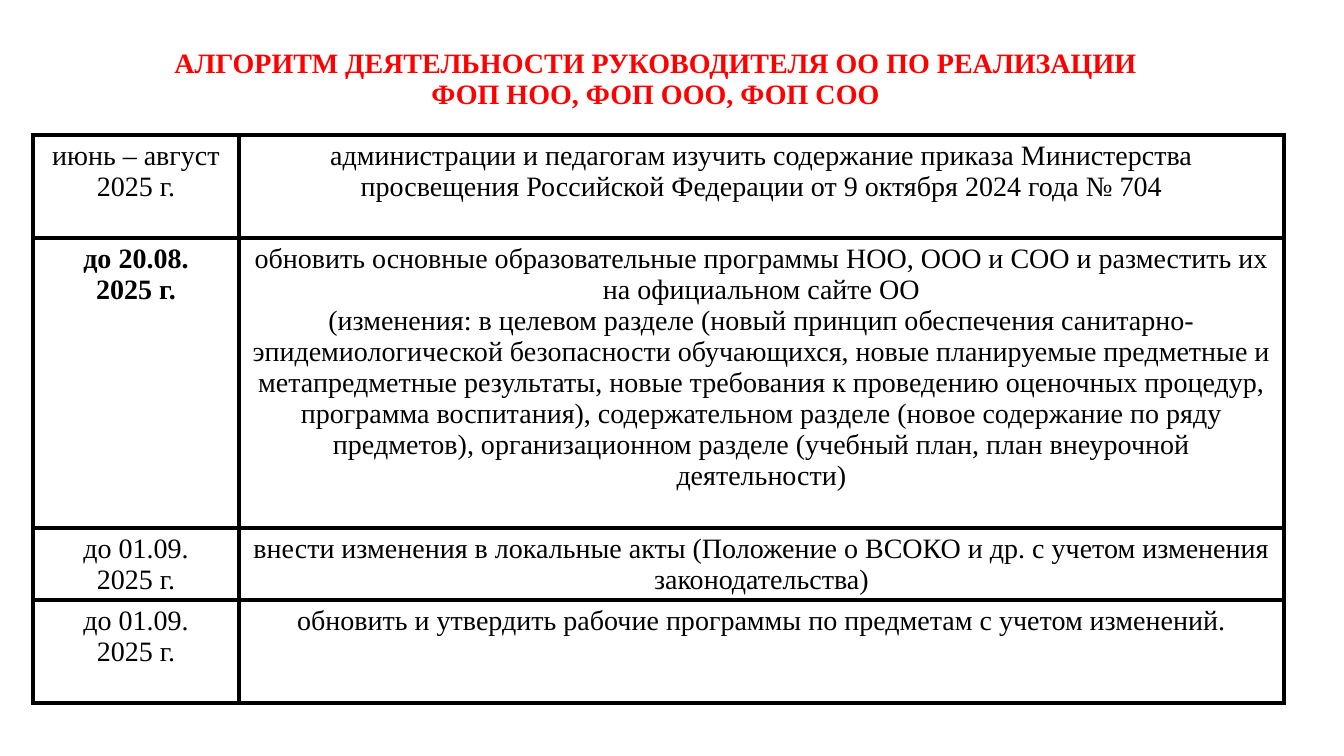
import pptx
import pptx.dml.color
import pptx.enum.text
import pptx.oxml
import pptx.oxml.ns
import pptx.util

EMU_PER_PX = 914400 / 100.8
FONT = "Times New Roman"
FONT_SIZE = 20
BORDER_WIDTH = 3
COLORS = {"title": "FF0000", "text": "000000", "border": "000000", "cell": "FFFFFF"}

TITLE = "АЛГОРИТМ ДЕЯТЕЛЬНОСТИ РУКОВОДИТЕЛЯ ОО ПО РЕАЛИЗАЦИИ\nФОП НОО, ФОП ООО, ФОП СОО"
COLUMN_WIDTHS = [206, 1045]
# Row height, deadline, whether the deadline is bold, task
STEPS = [
    (103, "июнь – август\n2025 г.", False,
     "администрации и педагогам изучить содержание приказа Министерства "
     "просвещения Российской Федерации от 9 октября 2024 года № 704"),
    (290, "до 20.08.\n2025 г.", True,
     "обновить основные образовательные программы НОО, ООО и СОО и разместить их "
     "на официальном сайте ОО\n"
     "(изменения: в целевом разделе (новый принцип обеспечения "
     "санитарно-эпидемиологической безопасности обучающихся, новые планируемые "
     "предметные и метапредметные результаты, новые требования к проведению "
     "оценочных процедур, программа воспитания), содержательном разделе (новое "
     "содержание по ряду предметов), организационном разделе (учебный план, план "
     "внеурочной деятельности)"),
    (72, "до 01.09.\n2025 г.", False,
     "внести изменения в локальные акты (Положение о ВСОКО и др. с учетом изменения "
     "законодательства)"),
    (103, "до 01.09.\n2025 г.", False,
     "обновить и утвердить рабочие программы по предметам с учетом изменений."),
]


def px(length):
    return pptx.util.Emu(round(length * EMU_PER_PX))


def color(name):
    return pptx.dml.color.RGBColor.from_string(COLORS[name])


def write_text(text_frame, text, color_name, bold):
    """Fill the first paragraph with centred lines parted by line breaks."""
    paragraph = text_frame.paragraphs[0]
    paragraph.alignment = pptx.enum.text.PP_ALIGN.CENTER
    for index, line in enumerate(text.split("\n")):
        if index:
            paragraph.add_line_break()
        run = paragraph.add_run()
        run.text = line
        run.font.name = FONT
        run.font.size = pptx.util.Pt(FONT_SIZE)
        run.font.bold = bold
        run.font.color.rgb = color(color_name)
    return paragraph


def add_title(slide):
    title = slide.shapes.title
    title.left, title.top, title.width, title.height = map(px, (76, 15, 1159, 130))
    title.text_frame.word_wrap = True
    title.text_frame.vertical_anchor = pptx.enum.text.MSO_ANCHOR.MIDDLE
    paragraph = write_text(title.text_frame, TITLE, "title", True)
    paragraph.line_spacing = 0.9


def set_borders(cell):
    properties = cell._tc.get_or_add_tcPr()
    for side in ("lnL", "lnR", "lnT", "lnB"):
        properties.append(pptx.oxml.parse_xml(
            f'<a:{side} {pptx.oxml.ns.nsdecls("a")} w="{pptx.util.Pt(BORDER_WIDTH)}">'
            f'<a:solidFill><a:srgbClr val="{COLORS["border"]}"/></a:solidFill>'
            f'</a:{side}>'))


def format_cell(cell, text, bold):
    set_borders(cell)
    cell.fill.solid()
    cell.fill.fore_color.rgb = color("cell")
    write_text(cell.text_frame, text, "text", bold)


def add_steps_table(slide):
    height = sum(step[0] for step in STEPS)
    frame = slide.shapes.add_table(
        len(STEPS), len(COLUMN_WIDTHS), px(33), px(135), px(sum(COLUMN_WIDTHS)), px(height))
    table = frame.table
    table.first_row = False
    table.horz_banding = False
    for column, width in zip(table.columns, COLUMN_WIDTHS):
        column.width = px(width)
    for index, (row_height, deadline, bold, task) in enumerate(STEPS):
        table.rows[index].height = px(row_height)
        format_cell(table.cell(index, 0), deadline, bold)
        format_cell(table.cell(index, 1), task, False)


def main():
    presentation = pptx.Presentation()
    presentation.slide_width = px(1344)
    presentation.slide_height = px(756)
    slide = presentation.slides.add_slide(presentation.slide_layouts[5])
    add_title(slide)
    add_steps_table(slide)
    presentation.save("out.pptx")


if __name__ == "__main__":
    main()
